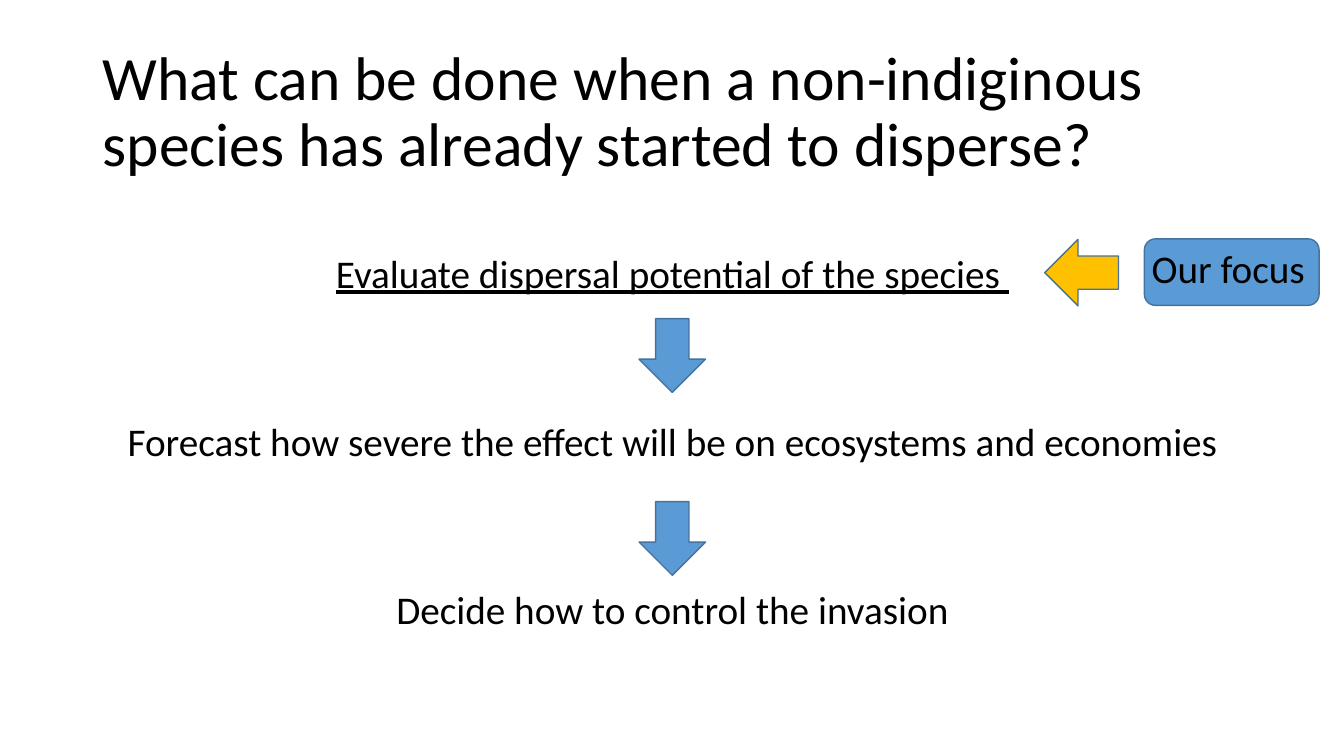
from pptx import Presentation
from pptx import util as u
from pptx.dml import color
from pptx.enum import shapes, text

HUES = {"ink": "000000", "blue": "5B9BD5", "edge": "43739E", "gold": "FFC000"}


class Board:
    """Draw styled elements on one slide, placed in percent of its size."""

    def __init__(self, deck):
        self.wide, self.high = deck.slide_width, deck.slide_height
        self.slide = deck.slides.add_slide(deck.slide_layouts[6])
        self.font = "Calibri"

    def area(self, left, top, width, height):
        return (int(self.wide * left / 100), int(self.high * top / 100),
                int(self.wide * width / 100), int(self.high * height / 100))

    def hue(self, name):
        return color.RGBColor.from_string(HUES[name])

    def label(self, place, lines, size, wrap=True, middle=False,
              center=False, lead=1.0, gaps=(0,), under=()):
        frame = self.slide.shapes.add_textbox(*self.area(*place)).text_frame
        frame.word_wrap = wrap
        anchor = text.MSO_ANCHOR
        frame.vertical_anchor = anchor.MIDDLE if middle else anchor.TOP
        for row, line in enumerate(lines):
            para = frame.add_paragraph() if row else frame.paragraphs[0]
            para.alignment = text.PP_ALIGN.CENTER if center else text.PP_ALIGN.LEFT
            para.line_spacing = lead
            para.space_before = u.Pt(gaps[min(row, len(gaps) - 1)])
            run = para.add_run()
            run.text = line
            run.font.name = self.font
            run.font.size = u.Pt(size)
            run.font.underline = row in under
            run.font.color.rgb = self.hue("ink")

    def shape(self, kind, place, fill, turn=0):
        item = self.slide.shapes.add_shape(kind, *self.area(*place))
        item.shadow.inherit = False
        item.rotation = turn
        item.fill.solid()
        item.fill.fore_color.rgb = self.hue(fill)
        item.line.color.rgb = self.hue("edge")
        item.line.width = u.Pt(1)

    def arrow(self, left, top, fill, turn=0):
        self.shape(shapes.MSO_SHAPE.DOWN_ARROW, (left, top, 4.95, 9.75), fill, turn)


def main():
    deck = Presentation()
    deck.slide_width, deck.slide_height = u.Inches(13.33), u.Inches(7.5)
    board = Board(deck)
    board.label((6.9, 5.33, 86.25, 19.33),
                ["What can be done when a non-indiginous species has already started to disperse?"],
                44, middle=True, lead=0.9)
    board.label((6.9, 29.2, 86.25, 60.8),
                ["Evaluate dispersal potential of the species ",
                 "Forecast how severe the effect will be on ecosystems and economies",
                 "Decide how to control the invasion"],
                28, center=True, lead=1.5, gaps=(10, 69.5), under=(0,))
    for step in range(2):
        board.arrow(47.55, 42.15 + 24.2 * step, "blue")
    board.arrow(78, 31.2, "gold", turn=90)
    board.shape(shapes.MSO_SHAPE.ROUNDED_RECTANGLE, (85.15, 31.6, 13, 8.8), "blue")
    board.label((84.95, 31.6, 13.05, 7.6), ["Our focus"], 28, wrap=False)
    deck.save("out.pptx")


if __name__ == "__main__":
    main()
